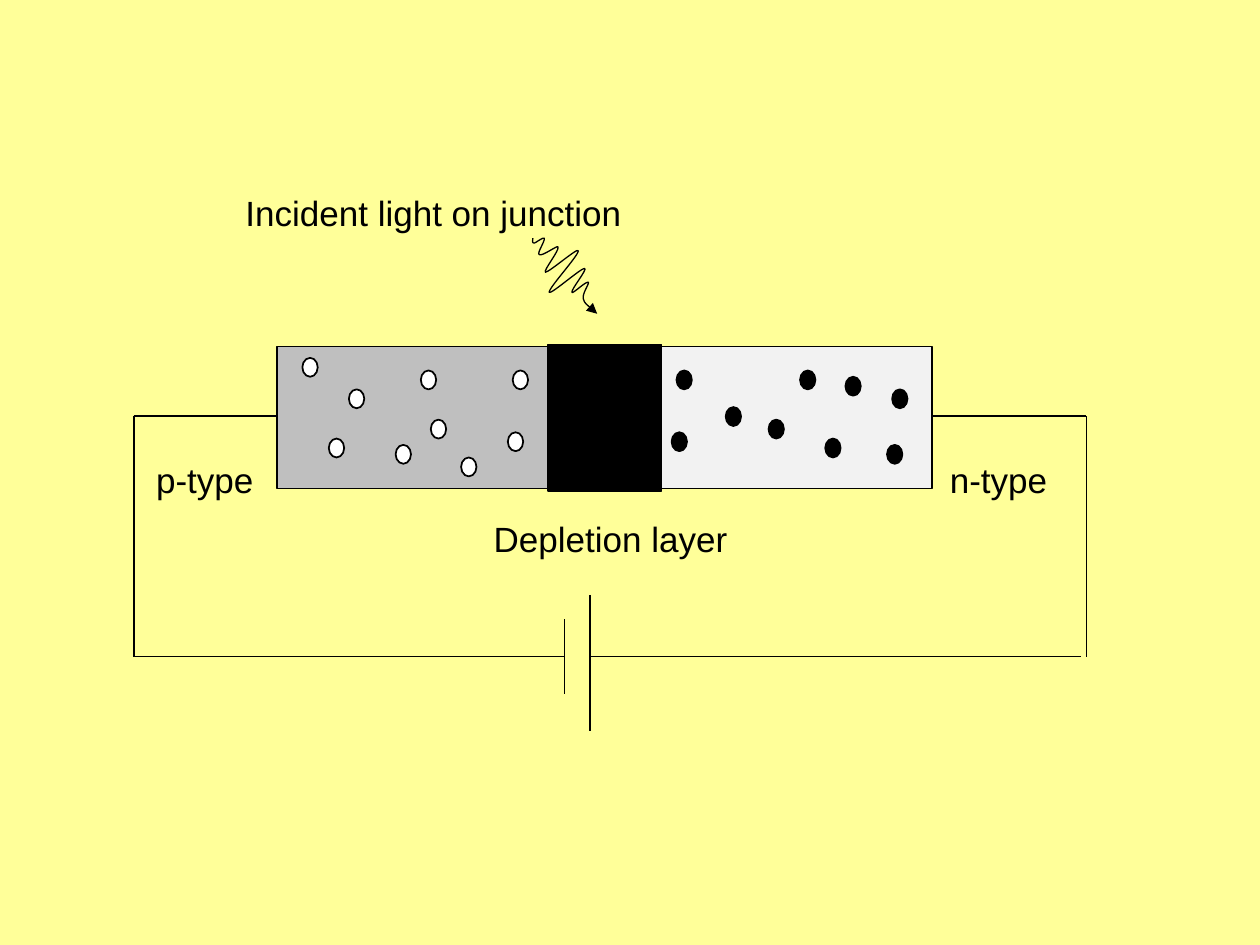
from pptx import Presentation
from pptx.dml.color import RGBColor
from pptx.enum import shapes, text
from pptx.oxml import ns, xmlchemy
from pptx.util import Pt

BLACK = "000000"
HOLES = [(41, 24.5), (67.7, 56.2), (105.1, 63.4), (82.1, 13.7), (29.5, 52.6),
         (87.8, 41.8), (14.4, 6.5), (134.6, 13.7), (131.8, 49)]
ELECTRONS = [(41, 13.7), (137.5, 17.3), (93.6, 41.8), (161.3, 56.2), (111.6, 13.7),
             (164.2, 24.5), (126, 52.6), (38.2, 49), (69.1, 34.6)]
WAVE = [(1, 0), (1, 1), (0, 4), (2, 4), (3, 4), (9, -1), (10, 0),
        (11, 2), (4, 12), (6, 13), (8, 15), (21, 5), (21, 7),
        (22, 10), (9, 26), (11, 27), (14, 27), (37, 7), (37, 10),
        (38, 13), (13, 40), (14, 43), (15, 45), (39, 24), (42, 24),
        (45, 24), (31, 41), (32, 43), (32, 45), (43, 34), (45, 35),
        (46, 36), (40, 44), (41, 48), (42, 52), (50, 58), (52, 60)]


def paint(fmt, hue):
    """Give a fill a solid colour."""
    fmt.solid()
    fmt.fore_color.rgb = RGBColor.from_string(hue)


def solid(slide, kind, x, y, w, h, hue):
    """Add a filled shape with a thin black outline."""
    item = slide.shapes.add_shape(kind, Pt(x), Pt(y), Pt(w), Pt(h))
    item.shadow.inherit = False
    paint(item.fill, hue)
    paint(item.line.fill, BLACK)
    item.line.width = Pt(1)


def wire(slide, x1, y1, x2, y2):
    """Add a straight black line."""
    line = slide.shapes.add_connector(
        shapes.MSO_CONNECTOR.STRAIGHT, Pt(x1), Pt(y1), Pt(x2), Pt(y2))
    paint(line.line.fill, BLACK)
    line.line.width = Pt(1)
    line._element.spPr.append(xmlchemy.OxmlElement("a:effectLst"))


def circuit(slide, x, y, w, h):
    """Draw the loop of wire and the two plates of the cell."""
    right, base = x + w, y + h
    short, long = x + 246.2, x + 260.6
    wire(slide, x, y, right, y)
    wire(slide, x, y, x, base)
    wire(slide, x, base, short, base)
    wire(slide, short, base - 21.2, short, base + 21.2)
    wire(slide, long, base - 35.3, long, base + 42.5)
    wire(slide, long, base, right - 2.9, base)
    wire(slide, right, y, right, base)


def diode(slide, x, y, w, h):
    """Draw both halves with their carriers and the layer between."""
    half = w / 2
    box, dot = shapes.MSO_SHAPE.RECTANGLE, shapes.MSO_SHAPE.OVAL
    sides = [(x, "BFBFBF", HOLES, "FFFFFF"), (x + half, "F2F2F2", ELECTRONS, BLACK)]
    for left, hue, _, _ in sides:
        solid(slide, box, left, y, half, h, hue)
    for left, _, spots, hue in sides:
        for dx, dy in spots:
            solid(slide, dot, left + dx, y + dy, 8.8, 10.8, hue)
    solid(slide, box, x + 154.8, y - 1.2, 64.8, h + 2.4, BLACK)


def light(slide, x, y, unit):
    """Draw the wavy ray as a chain of Bezier curves with an arrowhead."""
    spots = [(Pt(x + dx * unit), Pt(y + dy * unit)) for dx, dy in WAVE]
    form = slide.shapes.build_freeform(*spots[0])
    form.add_line_segments(spots[1:], close=False)
    ray = form.convert_to_shape()
    ray.shadow.inherit = False
    ray.fill.background()
    paint(ray.line.fill, BLACK)
    ray.line.width = Pt(0.75)
    steps = list(ray._element.iter(ns.qn("a:lnTo")))
    for i in range(0, len(steps), 3):
        curve = xmlchemy.OxmlElement("a:cubicBezTo")
        steps[i].addprevious(curve)
        for step in steps[i:i + 3]:
            curve.append(step[0])
            step.getparent().remove(step)
    tip = xmlchemy.OxmlElement("a:tailEnd")
    tip.set("type", "triangle")
    ray.line._get_or_add_ln().append(tip)


def label(slide, words, x, y, w, h=31):
    """Add a line of text."""
    frame = slide.shapes.add_textbox(Pt(x), Pt(y), Pt(w), Pt(h)).text_frame
    frame.word_wrap = True
    frame.auto_size = text.MSO_AUTO_SIZE.SHAPE_TO_FIT_TEXT
    frame.text = words
    font = frame.paragraphs[0].runs[0].font
    font.name, font.size = "Arial", Pt(20)
    paint(font.fill, BLACK)


def main():
    """Build the slide and save it."""
    deck = Presentation()
    deck.slide_width, deck.slide_height = Pt(720), Pt(540)
    slide = deck.slides.add_slide(deck.slide_layouts[6])
    paint(slide.background.fill, "FFFF99")
    circuit(slide, 76.4, 237.8, 544.4, 137.4)
    diode(slide, 158.4, 198, 374.4, 81.2)
    light(slide, 303.8, 136.1, 0.72)
    label(slide, "Incident light on junction", 133.2, 105.8, 266.4)
    label(slide, "Depletion layer", 275, 292.3, 198.7)
    label(slide, "p-type", 82.1, 258.5, 73.4)
    label(slide, "n-type", 535.7, 258.5, 73.4)
    deck.save("out.pptx")


if __name__ == "__main__":
    main()
